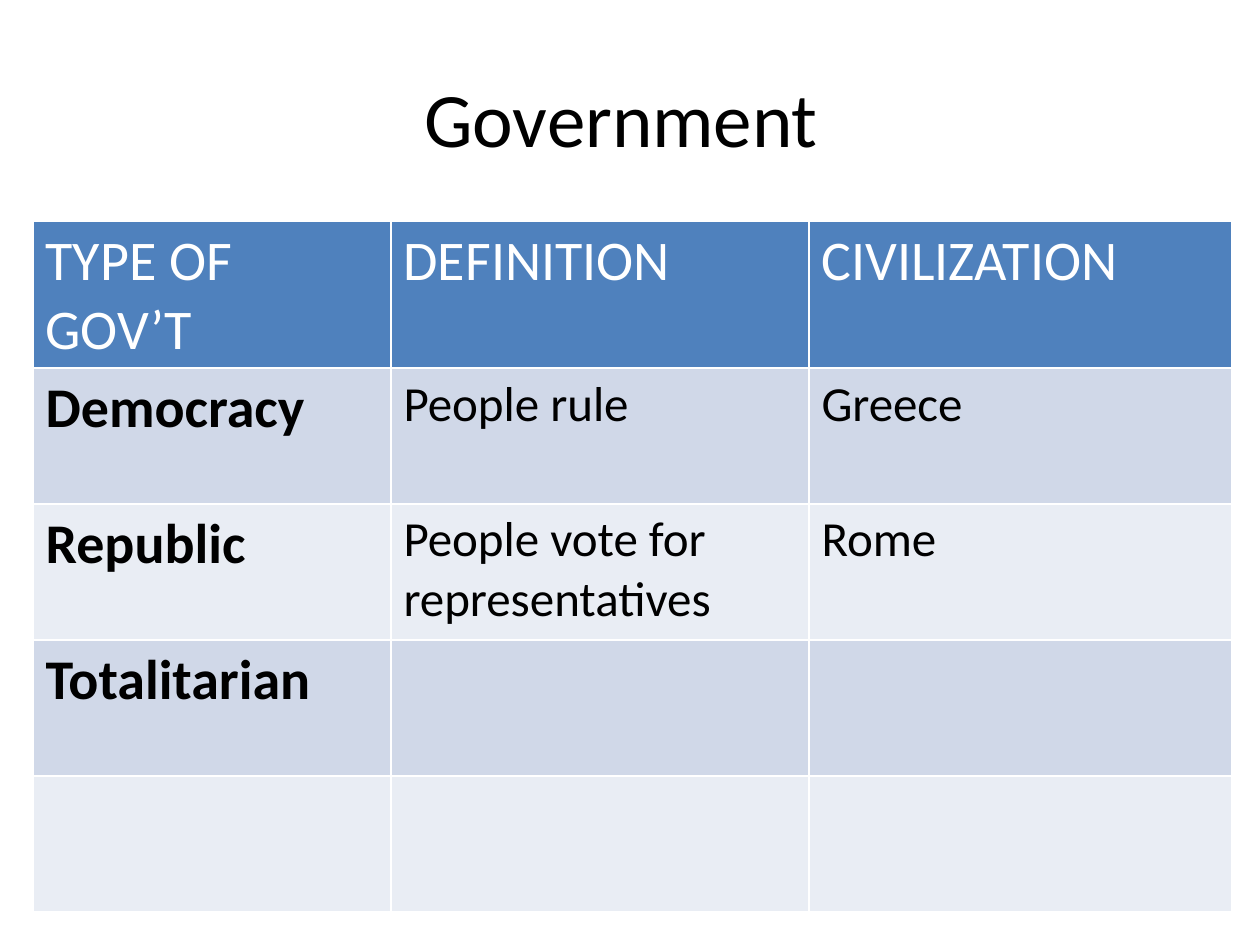
from dataclasses import dataclass

from pptx import Presentation
from pptx.dml.color import RGBColor
from pptx.enum.text import MSO_ANCHOR, PP_ALIGN
from pptx.slide import Slide
from pptx.table import Table, _Cell
from pptx.text.text import TextFrame
from pptx.util import Emu, Pt

MIDDLE = MSO_ANCHOR.MIDDLE
CENTER = PP_ALIGN.CENTER
BLACK = RGBColor(0x00, 0x00, 0x00)
WHITE = RGBColor(0xFF, 0xFF, 0xFF)
BLUE = RGBColor(0x4F, 0x81, 0xBD)
DARK = RGBColor(0xD0, 0xD8, 0xE8)
LIGHT = RGBColor(0xE9, 0xED, 0xF4)
FONT = "Calibri"
DPI = 126


@dataclass(frozen=True)
class Style:
    size: int
    color: RGBColor
    bold: bool = False


TITLE = Style(44, BLACK)
HEAD = Style(32, WHITE)
NAME = Style(32, BLACK, True)
BODY = Style(28, BLACK)

WIDTHS = [358, 418, 423]
HEIGHT = 136
ROWS = [
    ["TYPE OF GOV’T", "DEFINITION", "CIVILIZATION"],
    ["Democracy", "People rule", "Greece"],
    ["Republic", "People vote for representatives", "Rome"],
    ["Totalitarian", "", ""],
    ["", "", ""],
]


def px(count: int) -> Emu:
    return Emu(round(count * 914400 / DPI))


def write(frame: TextFrame, text: str, style: Style) -> None:
    frame.text = text
    for run in frame.paragraphs[0].runs:
        font = run.font
        font.name = FONT
        font.size = Pt(style.size)
        font.bold = style.bold
        font.color.rgb = style.color


def add_title(slide: Slide, text: str) -> None:
    box = slide.shapes.add_textbox(px(63), px(38), px(1134), px(158))
    frame = box.text_frame
    frame.word_wrap = True
    frame.vertical_anchor = MIDDLE
    write(frame, text, TITLE)
    frame.paragraphs[0].alignment = CENTER


def fill_cell(cell: _Cell, text: str, style: Style, color: RGBColor) -> None:
    cell.fill.solid()
    cell.fill.fore_color.rgb = color
    write(cell.text_frame, text, style)


def add_grid(slide: Slide) -> Table:
    table = slide.shapes.add_table(
        len(ROWS), len(WIDTHS), px(33), px(221),
        px(sum(WIDTHS)), px(HEIGHT * len(ROWS)),
    ).table
    for col, width in zip(table.columns, WIDTHS):
        col.width = px(width)
    for i, texts in enumerate(ROWS):
        table.rows[i].height = px(HEIGHT)
        color = BLUE if i == 0 else DARK if i % 2 else LIGHT
        for j, text in enumerate(texts):
            style = HEAD if i == 0 else BODY if j else NAME
            fill_cell(table.cell(i, j), text, style, color)
    return table


def main() -> None:
    deck = Presentation()
    deck.slide_width = px(1260)
    deck.slide_height = px(945)
    slide = deck.slides.add_slide(deck.slide_layouts[6])
    add_title(slide, "Government ")
    add_grid(slide)
    deck.save("out.pptx")


if __name__ == "__main__":
    main()
